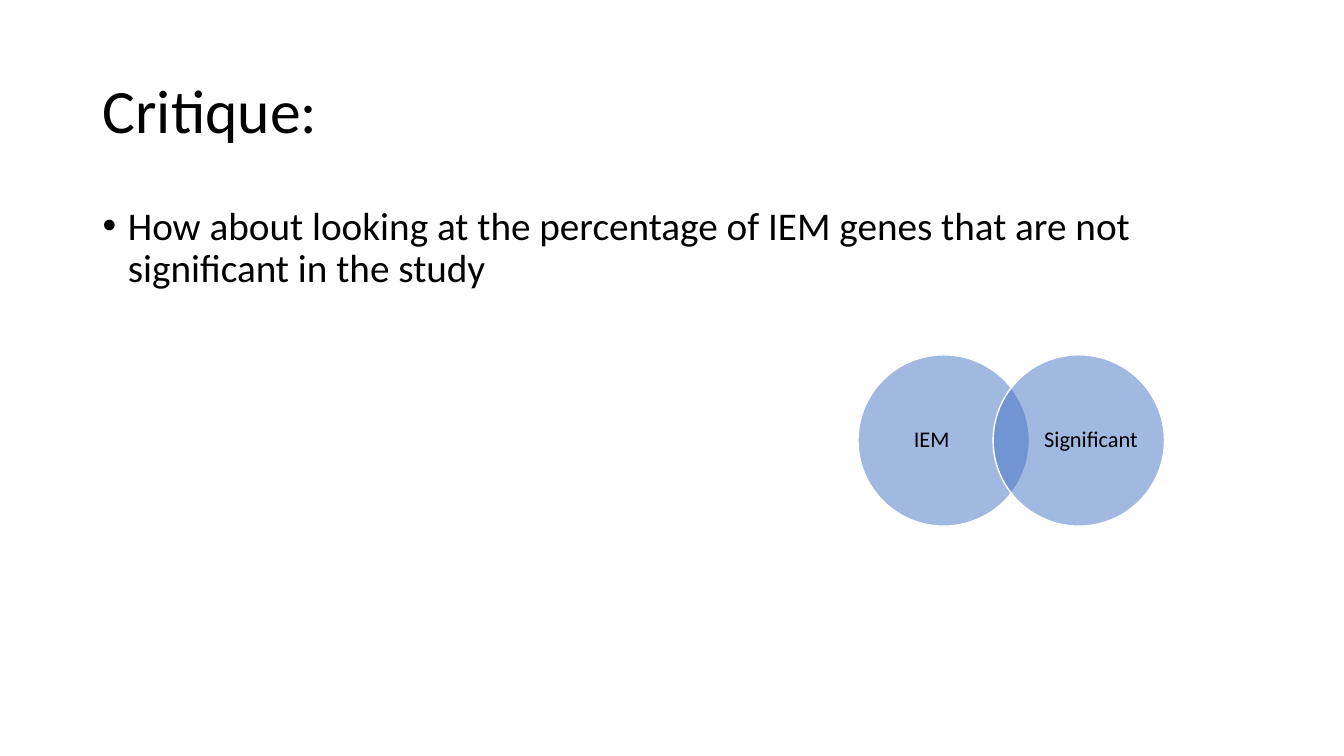
from dataclasses import dataclass

from lxml.etree import SubElement
from pptx import Presentation
from pptx.dml.color import RGBColor
from pptx.enum.shapes import MSO_SHAPE
from pptx.enum.text import MSO_ANCHOR as ANCHOR, PP_ALIGN as ALIGN
from pptx.oxml.ns import qn
from pptx.util import Inches, Pt


@dataclass(frozen=True)
class Theme:
    font: str = "Calibri"
    text: RGBColor = RGBColor(0x00, 0x00, 0x00)
    circle: RGBColor = RGBColor(0x44, 0x72, 0xC4)
    outline: RGBColor = RGBColor(0xFF, 0xFF, 0xFF)
    circle_alpha: int = 50
    title_size: int = 44
    body_size: int = 28
    label_size: int = 16


THEME = Theme()
NO_INSETS = {f"margin_{side}": 0 for side in ("left", "top", "right", "bottom")}
CIRCLE_TOP, CIRCLE_SIZE = 3.52, 1.7
LABEL_TOP, LABEL_WIDTH, LABEL_HEIGHT = 3.72, 0.98, 1.3
VENN_SETS = [("IEM", 8.51, 8.75), ("Significant", 9.85, 10.33)]


def set_attributes(target, values):
    for name, value in values.items():
        setattr(target, name, value)


def add_text(shapes, text, box, size, frame_format=None, paragraph_format=None):
    tf = shapes.add_textbox(*map(Inches, box)).text_frame
    set_attributes(tf, {"word_wrap": True, **(frame_format or {})})
    p = tf.paragraphs[0]
    set_attributes(p, {"line_spacing": 0.9, **(paragraph_format or {})})
    r = p.add_run()
    r.text = text
    set_attributes(r.font, {"name": THEME.font, "size": Pt(size)})
    r.font.color.rgb = THEME.text
    return p


def add_bullet(p, indent):
    pPr = p._p.get_or_add_pPr()
    pPr.set("marL", str(Inches(indent)))
    pPr.set("indent", str(-Inches(indent)))
    SubElement(pPr, qn("a:buFont"), typeface="Arial")
    SubElement(pPr, qn("a:buChar"), char="•")


def add_circle(shapes, left):
    box = (left, CIRCLE_TOP, CIRCLE_SIZE, CIRCLE_SIZE)
    sp = shapes.add_shape(MSO_SHAPE.OVAL, *map(Inches, box))
    sp.shadow.inherit = False
    sp.fill.solid()
    sp.fill.fore_color.rgb = THEME.circle
    color = sp._element.spPr.find(qn("a:solidFill")).find(qn("a:srgbClr"))
    SubElement(color, qn("a:alpha"), val=str(THEME.circle_alpha * 1000))
    sp.line.color.rgb = THEME.outline
    sp.line.width = Pt(1)


def add_venn(shapes):
    group = shapes.add_group_shape()
    for name, circle_left, label_left in VENN_SETS:
        add_circle(group.shapes, circle_left)
        add_text(group.shapes, name,
                 (label_left, LABEL_TOP, LABEL_WIDTH, LABEL_HEIGHT),
                 THEME.label_size,
                 {"vertical_anchor": ANCHOR.MIDDLE, **NO_INSETS},
                 {"alignment": ALIGN.CENTER})


def main():
    prs = Presentation()
    set_attributes(prs, {"slide_width": Inches(13.33), "slide_height": Inches(7.5)})
    shapes = prs.slides.add_slide(prs.slide_layouts[6]).shapes
    add_text(shapes, "Critique:", (0.92, 0.4, 11.5, 1.45), THEME.title_size,
             {"vertical_anchor": ANCHOR.MIDDLE})
    question = add_text(
        shapes,
        "How about looking at the percentage of IEM genes that are not "
        "significant in the study",
        (0.92, 2, 11.5, 4.76), THEME.body_size,
        paragraph_format={"space_before": Pt(10)})
    add_bullet(question, 0.25)
    add_venn(shapes)
    prs.save("out.pptx")


if __name__ == "__main__":
    main()
